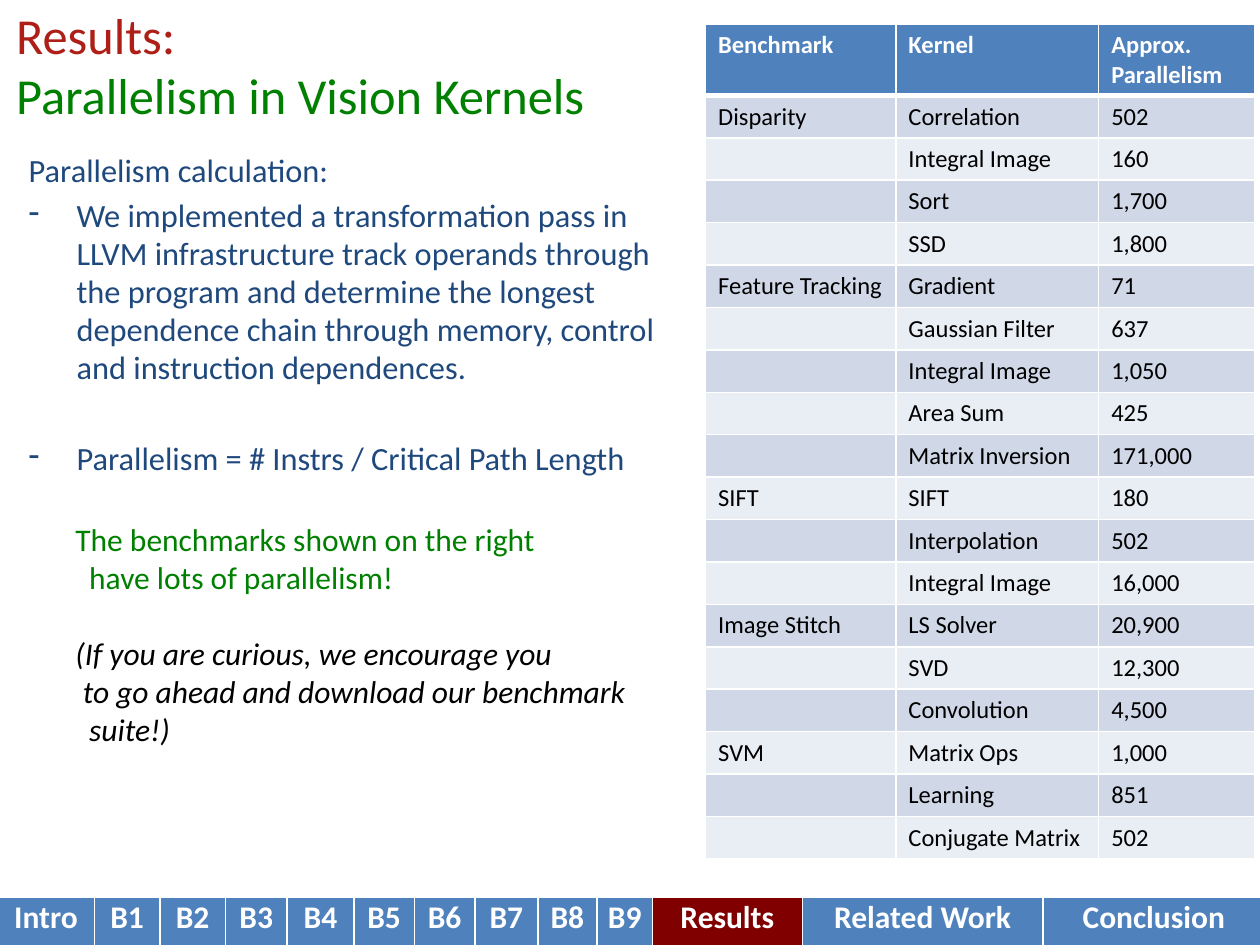
from dataclasses import dataclass

from lxml.etree import SubElement
from pptx import Presentation
from pptx.dml.color import RGBColor
from pptx.enum.text import MSO_ANCHOR, PP_ALIGN
from pptx.oxml.ns import qn
from pptx.util import Inches, Pt

SLIDE_WIDTH, SLIDE_HEIGHT = Inches(10), Inches(7.5)


@dataclass(frozen=True)
class Theme:
    font: str = "Calibri"
    red: str = "AE1F17"
    green: str = "008000"
    navy: str = "1F497D"
    black: str = "000000"
    white: str = "FFFFFF"
    header: str = "4F81BD"
    current: str = "800000"
    bands: tuple = ("D0D8E8", "E9EDF4")
    title_size: float = 28.8
    body_size: float = 18.5
    note_size: float = 18
    table_size: float = 14


THEME = Theme()

# Kernels of each benchmark, with their approximate parallelism
BENCHMARKS = {
    "Disparity": [("Correlation", "502"), ("Integral Image", "160"),
                  ("Sort", "1,700"), ("SSD", "1,800")],
    "Feature Tracking": [("Gradient", "71"), ("Gaussian Filter", "637"),
                         ("Integral Image", "1,050"), ("Area Sum", "425"),
                         ("Matrix Inversion", "171,000")],
    "SIFT": [("SIFT", "180"), ("Interpolation", "502"),
             ("Integral Image", "16,000")],
    "Image Stitch": [("LS Solver", "20,900"), ("SVD", "12,300"),
                     ("Convolution", "4,500")],
    "SVM": [("Matrix Ops", "1,000"), ("Learning", "851"),
            ("Conjugate Matrix", "502")],
}
SECTIONS = ["Intro", *(f"B{number}" for number in range(1, 10)),
            "Results", "Related Work", "Conclusion"]
SECTION_WIDTHS = [7.7, 5.2, 5.2, 4.9, 5.3, 4.8, 4.8, 5, 4.7, 4.4, 11.9, 19.1, 17.6]


def across(percent):
    return int(SLIDE_WIDTH * percent / 100)


def down(percent):
    return int(SLIDE_HEIGHT * percent / 100)


def area(left, top, width, height):
    """Turn percentages of the slide into a frame."""
    return across(left), down(top), across(width), down(height)


def apply(target, **values):
    for name, value in values.items():
        setattr(target, name, value)


def add_span(para, text, size, color, **style):
    span = para.add_run()
    span.text = text
    apply(span.font, name=THEME.font, size=Pt(size), **style)
    span.font.color.rgb = RGBColor.from_string(color)


def add_box(page, frame, anchor=MSO_ANCHOR.TOP):
    text_frame = page.shapes.add_textbox(*frame).text_frame
    apply(text_frame, word_wrap=True, vertical_anchor=anchor)
    return text_frame


def next_para(box, first):
    return box.paragraphs[0] if first else box.add_paragraph()


def set_indent(para, left, hanging=0, bullet=None):
    properties = para._p.get_or_add_pPr()
    properties.set("marL", str(Inches(left)))
    properties.set("indent", str(-Inches(hanging)))
    if bullet:
        SubElement(properties, qn("a:buChar"), char=bullet)


def add_title(page):
    box = add_box(page, area(0.3, 2.13, 54.3, 9.33), MSO_ANCHOR.MIDDLE)
    para = box.paragraphs[0]
    add_span(para, "Results:", THEME.title_size, THEME.red)
    para.add_line_break()
    add_span(para, "Parallelism in Vision Kernels", THEME.title_size, THEME.green)


def add_explanation(page):
    box = add_box(page, area(1.3, 15.47, 53.6, 35.6))
    items = [
        ("Parallelism calculation:", None, 0),
        ("We implemented a transformation pass in LLVM infrastructure track "
         "operands through the program and determine the longest dependence "
         "chain through memory, control and instruction dependences.", "-", 3.7),
        ("Parallelism = # Instrs / Critical Path Length", "-", 30),
    ]
    for index, (text, bullet, gap) in enumerate(items):
        para = next_para(box, index == 0)
        apply(para, space_before=Pt(gap), line_spacing=0.98)
        set_indent(para, 0.38, 0.38, bullet)
        add_span(para, text, THEME.body_size, THEME.navy)


def add_remarks(page):
    box = add_box(page, area(5, 54.4, 46.7, 25.6))
    plain = {"color": THEME.green}
    aside = {"color": THEME.black, "italic": True}
    lines = [
        ("The benchmarks shown on the right", 0, 0, plain),
        ("have lots of parallelism!", 0.11, 0, plain),
        ("(If you are curious, we encourage you", 0, 22, aside),
        ("to go ahead and download our benchmark", 0.06, 0, aside),
        ("suite!)", 0.11, 0, aside),
    ]
    for index, (text, indent, gap, style) in enumerate(lines):
        para = next_para(box, index == 0)
        para.space_before = Pt(gap)
        set_indent(para, indent)
        add_span(para, text, THEME.note_size, **style)


def set_borders(cell, bottom):
    properties = cell._tc.get_or_add_tcPr()
    for side, width in {"L": 1, "R": 1, "T": 1, "B": bottom}.items():
        line = SubElement(properties, qn(f"a:ln{side}"), w=str(Pt(width)))
        fill = SubElement(line, qn("a:solidFill"))
        SubElement(fill, qn("a:srgbClr"), val=THEME.white)


def fill_cell(cell, text, size, color, fill, bold=False, bottom=1):
    set_borders(cell, bottom)
    cell.fill.solid()
    cell.fill.fore_color.rgb = RGBColor.from_string(fill)
    para = cell.text_frame.paragraphs[0]
    if text:
        add_span(para, text, size, color, bold=bold)
    else:
        # An empty cell keeps the text size, so its row stays low
        SubElement(para._p, qn("a:endParaRPr"), sz=str(size * 100))
    return para


def add_grid(page, frame, widths, row_count):
    table = page.shapes.add_table(row_count, len(widths), *frame).table
    for column, width in zip(table.columns, widths):
        column.width = across(width)
    return table


def add_benchmarks(page):
    rows = [("Benchmark", "Kernel", "Approx. Parallelism")]
    for benchmark, kernels in BENCHMARKS.items():
        for index, (kernel, parallelism) in enumerate(kernels):
            rows.append(("" if index else benchmark, kernel, parallelism))

    table = add_grid(page, area(56, 2.53, 43.6, 88.4), [15.1, 16.1, 12.4], len(rows))
    for index, texts in enumerate(rows):
        table.rows[index].height = down(4.49 if index else 7.47)
        if index:
            style = {"color": THEME.black, "fill": THEME.bands[(index - 1) % 2]}
        else:
            style = {"color": THEME.white, "fill": THEME.header,
                     "bold": True, "bottom": 3}
        for cell, text in zip(table.rows[index].cells, texts):
            fill_cell(cell, text, THEME.table_size, **style)


def add_navigation(page):
    table = add_grid(page, area(-0.2, 94.93, 100.6, 5.47), SECTION_WIDTHS, 1)
    for cell, section in zip(table.rows[0].cells, SECTIONS):
        fill = THEME.current if section == "Results" else THEME.header
        para = fill_cell(cell, section, THEME.note_size, THEME.white, fill,
                         bold=True, bottom=3)
        para.alignment = PP_ALIGN.CENTER
        apply(cell, margin_left=0, margin_right=0,
              margin_top=Inches(0.01), margin_bottom=Inches(0.01))


def main():
    deck = Presentation()
    apply(deck, slide_width=SLIDE_WIDTH, slide_height=SLIDE_HEIGHT)
    page = deck.slides.add_slide(deck.slide_layouts[6])
    for add_part in (add_title, add_explanation, add_benchmarks,
                     add_remarks, add_navigation):
        add_part(page)
    deck.save("out.pptx")


if __name__ == "__main__":
    main()
